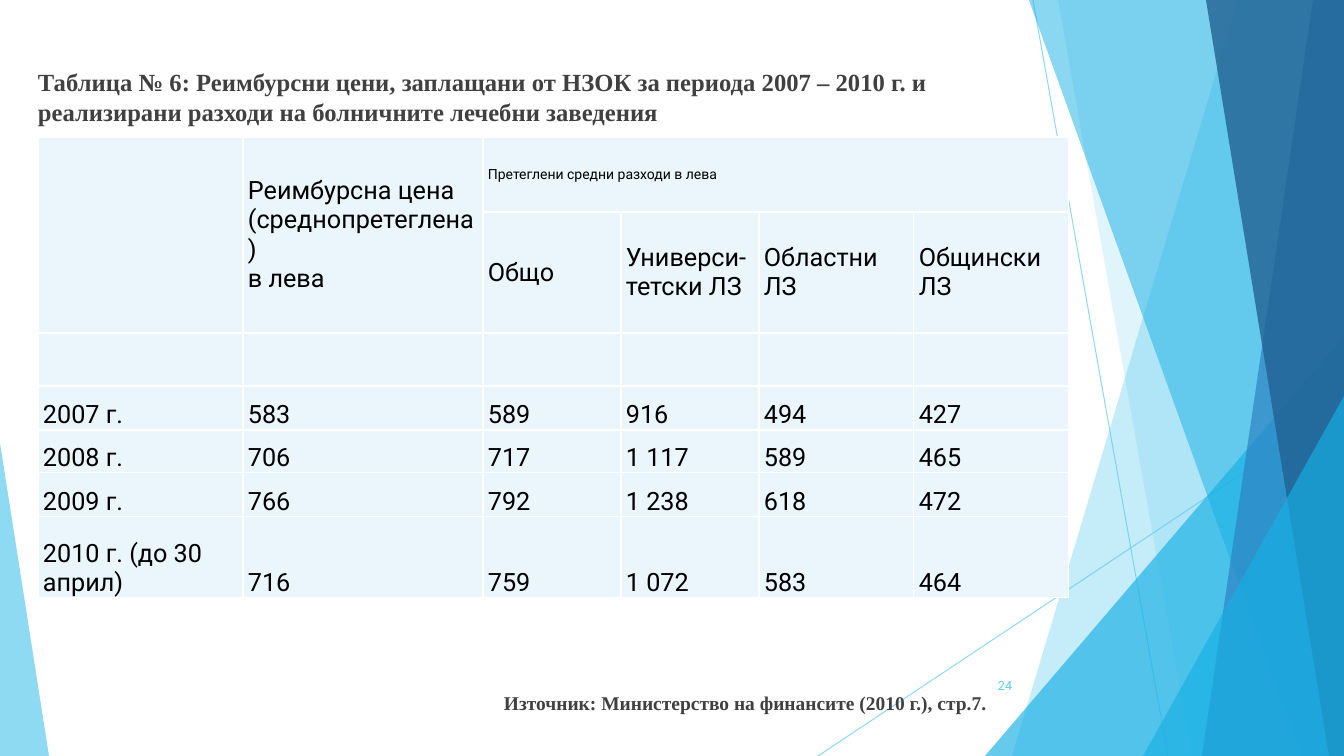
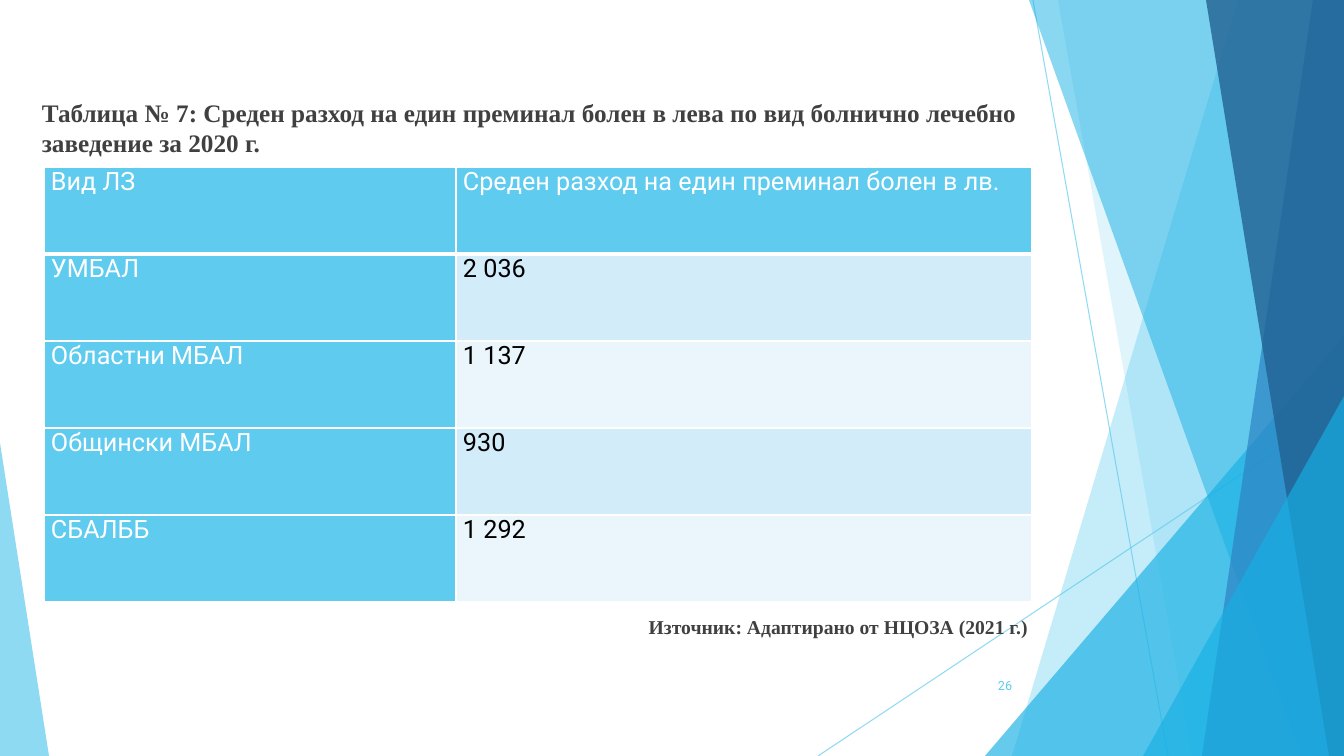
from dataclasses import dataclass

from lxml import etree
from pptx import Presentation
from pptx.dml import color
from pptx.enum import shapes, text
from pptx.oxml import ns
from pptx.util import Emu, Pt

SLIDE_W, SLIDE_H = 1344, 756
EMU_PER_PX = 12192000 / SLIDE_W
SANS, SERIF = "Roboto", "Times New Roman"
COLORS = {
    "sky": "5FCBEF",
    "azure": "17B0E4",
    "blue": "2E83C3",
    "navy": "226292",
    "pale": "EAF6FC",
    "light": "D2ECF9",
    "white": "FFFFFF",
    "black": "000000",
    "gray": "404040",
}


@dataclass(frozen=True)
class Ray:
    start: tuple[int, int]
    end: tuple[int, int]


@dataclass(frozen=True)
class Band:
    """A full-height area from a slanted left side to the slide's right edge."""
    top_x: int
    bottom_x: int
    fill: str
    alpha: int


@dataclass(frozen=True)
class Wedge:
    """A triangle standing on the bottom edge; apex 0 is left, 1 is right."""
    left: int
    top: int
    width: int
    apex: int
    fill: str
    alpha: int


@dataclass(frozen=True)
class Label:
    left: int
    top: int
    width: int
    height: int
    wording: str
    size: float
    font: str = SERIF
    ink: str = "gray"
    bold: bool = True
    align: text.PP_ALIGN = text.PP_ALIGN.LEFT
    anchor: text.MSO_ANCHOR = text.MSO_ANCHOR.TOP


@dataclass(frozen=True)
class CellStyle:
    fill: str
    ink: str = "black"
    anchor: text.MSO_ANCHOR = text.MSO_ANCHOR.TOP
    inset: int = 7
    size: float = 18
    top_border: float = 1
    bottom_border: float = 1


RAYS = [Ray((1033, 0), (1168, SLIDE_H)), Ray((SLIDE_W, 406), (818, SLIDE_H))]
DECORATION = [
    Band(1238, 1012, "sky", 36),
    Band(1058, 1192, "sky", 20),
    Wedge(985, 336, 359, 1, "azure", 66),
    Band(1029, 1301, "azure", 50),
    Band(1313, 1202, "blue", 70),
    Band(1206, 1329, "navy", 80),
    Wedge(1143, 396, 201, 1, "azure", 66),
    Wedge(0, 443, 49, 0, "sky", 70),
]

PRICE_COLUMNS = [205, 240, 138, 138, 155, 155]
PRICE_ROWS = [75, 119, 53, 44, 43, 44, 81]
PRICES = [
    ["", "Реимбурсна цена (среднопретеглена)\nв лева",
     "Претеглени средни разходи в лева", "", "", ""],
    ["", "", "Общо", "Универси-тетски ЛЗ", "Областни ЛЗ", "Общински ЛЗ"],
    [""] * 6,
    ["2007 г.", "583", "589", "916", "494", "427"],
    ["2008 г.", "706", "717", "1 117", "589", "465"],
    ["2009 г.", "766", "792", "1 238", "618", "472"],
    ["2010 г. (до 30 април)", "716", "759", "1 072", "583", "464"],
]
PRICE_MERGES = [((0, 0), (1, 0)), ((0, 1), (1, 1)), ((0, 2), (0, 5))]

COST_COLUMNS = [412, 576]
COST_ROWS = [87] * 5
COSTS = [
    ["Вид ЛЗ", "Среден разход на един преминал болен в лв."],
    ["УМБАЛ", "2 036"],
    ["Областни МБАЛ", "1 137"],
    ["Общински МБАЛ", "930"],
    ["СБАЛББ", "1 292"],
]


def px(length: int) -> Emu:
    return Emu(round(length * EMU_PER_PX))


def rgb(name: str) -> color.RGBColor:
    return color.RGBColor.from_string(COLORS[name])


def set_alpha(shape, percent: int) -> None:
    for paint in shape.element.iter(ns.qn("a:srgbClr")):
        etree.SubElement(paint, ns.qn("a:alpha"), val=str(percent * 1000))


def add_ray(page, ray: Ray) -> None:
    line = page.shapes.add_connector(
        shapes.MSO_CONNECTOR.STRAIGHT, *map(px, ray.start + ray.end))
    line.line.color.rgb = rgb("sky")
    line.line.width = Pt(0.75)
    set_alpha(line, 70)
    etree.SubElement(line.element.spPr, ns.qn("a:effectLst"))


def add_facet(page, facet: Band | Wedge) -> None:
    if isinstance(facet, Band):
        outline = page.shapes.build_freeform(px(facet.top_x), 0, scale=1.0)
        corners = [(SLIDE_W, 0), (SLIDE_W, SLIDE_H), (facet.bottom_x, SLIDE_H)]
        outline.add_line_segments([(px(x), px(y)) for x, y in corners])
        shape = outline.convert_to_shape()
    else:
        shape = page.shapes.add_shape(
            shapes.MSO_SHAPE.ISOSCELES_TRIANGLE, px(facet.left), px(facet.top),
            px(facet.width), px(SLIDE_H - facet.top))
        shape.adjustments[0] = facet.apex
    shape.shadow.inherit = False
    shape.line.fill.background()
    shape.fill.solid()
    shape.fill.fore_color.rgb = rgb(facet.fill)
    set_alpha(shape, facet.alpha)


def add_label(page, label: Label) -> None:
    box = page.shapes.add_textbox(
        px(label.left), px(label.top), px(label.width), px(label.height))
    frame = box.text_frame
    frame.word_wrap = True
    frame.vertical_anchor = label.anchor
    frame.text = label.wording
    para = frame.paragraphs[0]
    para.alignment = label.align
    font = para.runs[0].font
    font.name, font.size, font.bold = label.font, Pt(label.size), label.bold
    font.color.rgb = rgb(label.ink)


def set_borders(cell, style: CellStyle) -> None:
    """Insert white borders ahead of the cell's fill, as the schema orders."""
    widths = {"lnL": 1, "lnR": 1, "lnT": style.top_border,
              "lnB": style.bottom_border}
    properties = cell._tc.get_or_add_tcPr()
    for place, (tag, width) in enumerate(widths.items()):
        border = etree.Element(ns.qn(f"a:{tag}"), w=str(Pt(width)))
        paint = etree.SubElement(border, ns.qn("a:solidFill"))
        etree.SubElement(paint, ns.qn("a:srgbClr"), val=COLORS["white"])
        properties.insert(place, border)


def fill_cell(cell, wording: str, style: CellStyle) -> None:
    cell.fill.solid()
    cell.fill.fore_color.rgb = rgb(style.fill)
    cell.margin_left = cell.margin_right = px(style.inset)
    cell.margin_top = cell.margin_bottom = 0
    cell.vertical_anchor = style.anchor
    set_borders(cell, style)
    if wording:
        cell.text_frame.text = wording
    for para in cell.text_frame.paragraphs:
        for span in para.runs:
            span.font.name, span.font.size = SANS, Pt(style.size)
            span.font.bold = False
            span.font.color.rgb = rgb(style.ink)


def price_style(row: int, column: int) -> CellStyle:
    anchor = text.MSO_ANCHOR.MIDDLE if row < 2 else text.MSO_ANCHOR.BOTTOM
    size = 10 if (row, column) == (0, 2) else 18
    return CellStyle("pale", anchor=anchor, inset=5, size=size)


def cost_style(row: int, column: int) -> CellStyle:
    if row == 0:
        return CellStyle("sky", "white", bottom_border=3)
    top_border = 3 if row == 1 else 1
    if column == 0:
        return CellStyle("sky", "white", top_border=top_border)
    return CellStyle("light" if row % 2 else "pale", top_border=top_border)


def add_grid(page, left: int, top: int, columns: list[int], rows: list[int],
             wordings: list[list[str]], style_of, merges=()) -> None:
    table = page.shapes.add_table(
        len(rows), len(columns), px(left), px(top),
        px(sum(columns)), px(sum(rows))).table
    table.first_row = table.horz_banding = False
    for column, width in zip(table.columns, columns):
        column.width = px(width)
    for row, height in zip(table.rows, rows):
        row.height = px(height)
    for r, line in enumerate(wordings):
        for c, wording in enumerate(line):
            fill_cell(table.cell(r, c), wording, style_of(r, c))
    for first, last in merges:
        table.cell(*first).merge(table.cell(*last))


def add_page(deck, number: int, title: Label, source: Label):
    page = deck.slides.add_slide(deck.slide_layouts[6])
    for ray in RAYS:
        add_ray(page, ray)
    for facet in DECORATION:
        add_facet(page, facet)
    page_number = Label(946, 666, 76, 40, str(number), 9, SANS, "sky", False,
                        text.PP_ALIGN.RIGHT, text.MSO_ANCHOR.MIDDLE)
    for label in (title, source, page_number):
        add_label(page, label)
    return page


def main() -> None:
    deck = Presentation()
    deck.slide_width, deck.slide_height = px(SLIDE_W), px(SLIDE_H)

    prices = add_page(
        deck, 24,
        Label(28, 62, 1010, 70, "Таблица № 6: Реимбурсни цени, заплащани от НЗОК "
              "за периода 2007 – 2010 г. и реализирани разходи на болничните "
              "лечебни заведения", 17.6),
        Label(447, 686, 550, 32, "Източник: Министерство на финансите (2010 г.), "
              "стр.7.", 13.9, align=text.PP_ALIGN.RIGHT))
    add_grid(prices, 38, 137, PRICE_COLUMNS, PRICE_ROWS, PRICES, price_style,
             PRICE_MERGES)

    costs = add_page(
        deck, 26,
        Label(32, 92, 1010, 70, "Таблица № 7: Среден разход на един преминал болен "
              "в лева по вид болнично лечебно заведение за 2020 г.", 18),
        Label(488, 610, 550, 32, "Източник: Адаптирано от НЦОЗА (2021 г.)", 14,
              align=text.PP_ALIGN.RIGHT))
    add_grid(costs, 44, 167, COST_COLUMNS, COST_ROWS, COSTS, cost_style)

    deck.save("out.pptx")


if __name__ == "__main__":
    main()
